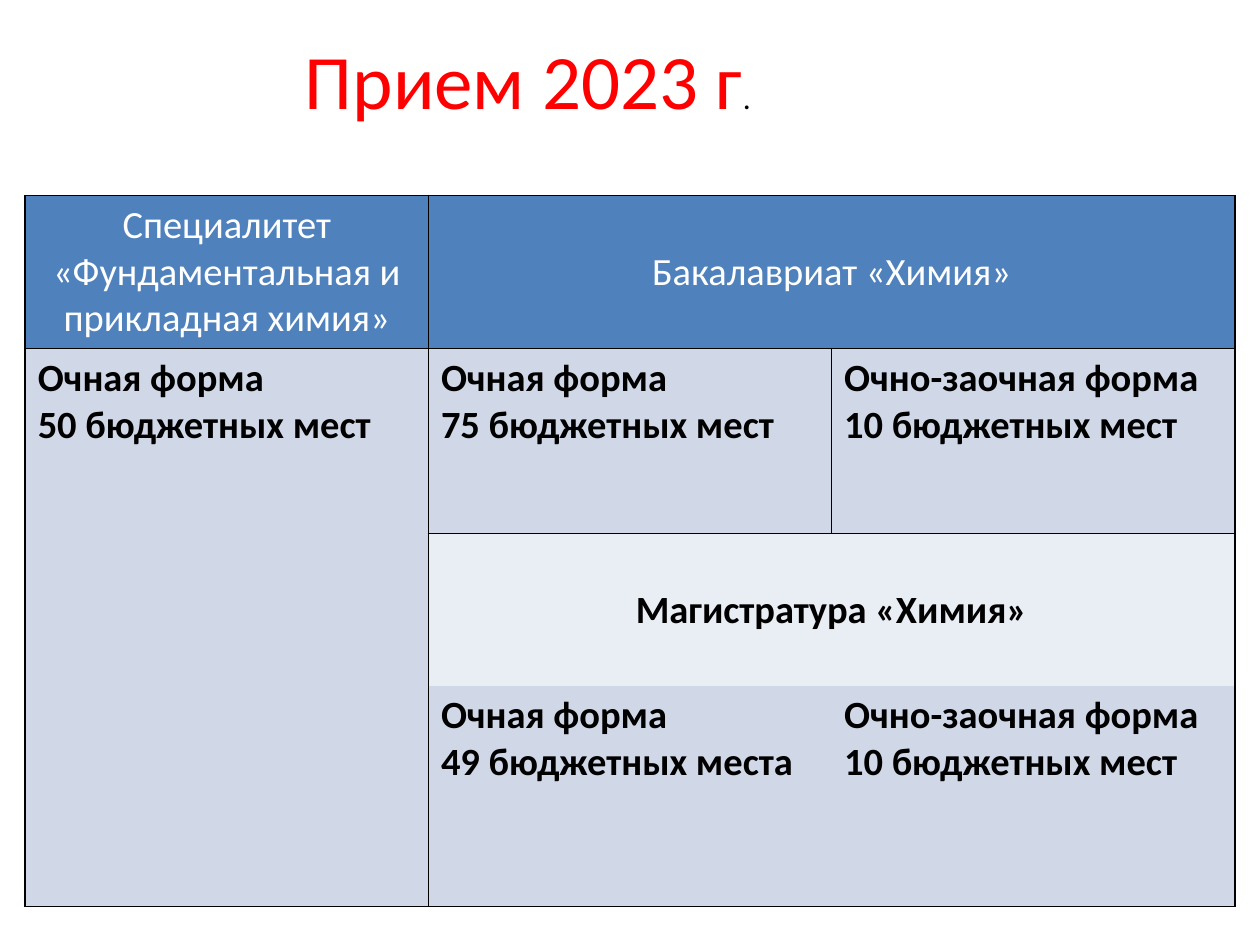
from dataclasses import dataclass

from lxml import etree
from pptx import Presentation
from pptx.dml.color import RGBColor
from pptx.enum.text import MSO_ANCHOR, MSO_AUTO_SIZE, PP_ALIGN
from pptx.oxml.ns import qn
from pptx.util import Inches, Pt

TOP, MIDDLE = MSO_ANCHOR.TOP, MSO_ANCHOR.MIDDLE
LEFT, CENTER = PP_ALIGN.LEFT, PP_ALIGN.CENTER
NO_FIT = MSO_AUTO_SIZE.NONE
FONT = "Calibri"
BLACK, WHITE, RED = "000000", "FFFFFF", "FF0000"
BLUE, BAND, PALE = "4F81BD", "D0D8E8", "E9EDF4"
WIDTHS = [3.2, 3.2, 3.2]
HEIGHTS = [1.21, 1.47, 1.21, 1.75]


@dataclass
class Entry:
    row: int
    col: int
    text: str
    fill: str = BAND
    rows: int = 1
    cols: int = 1
    head: bool = False   # centred heading
    color: str = BLACK
    sides: str = "LRTB"  # edges with a line


ENTRIES = [
    Entry(0, 0, "Специалитет «Фундаментальная и прикладная химия»",
          BLUE, head=True, color=WHITE),
    Entry(0, 1, "Бакалавриат «Химия»", BLUE, cols=2, head=True, color=WHITE),
    Entry(1, 0, "Очная форма\n50 бюджетных мест", rows=3),
    Entry(1, 1, "Очная форма\n75 бюджетных мест"),
    Entry(1, 2, "Очно-заочная форма\n10 бюджетных мест"),
    Entry(2, 1, "Магистратура «Химия»", PALE, cols=2, head=True, sides="LRT"),
    Entry(3, 1, "Очная форма\n49 бюджетных места", sides="LB"),
    Entry(3, 2, "Очно-заочная форма\n10 бюджетных мест", sides="RB"),
]


def rgb(code: str) -> RGBColor:
    return RGBColor.from_string(code)


def style(run, size: float, color: str, bold: bool = False) -> None:
    font = run.font
    font.name, font.size, font.bold = FONT, Pt(size), bold
    font.color.rgb = rgb(color)


def edge(cell, sides: str) -> None:
    """Line the named sides and clear the others."""
    props = cell._tc.get_or_add_tcPr()
    for side in "LRTB":
        line = etree.SubElement(props, qn(f"a:ln{side}"), w=str(Pt(1)))
        if side in sides:
            fill = etree.SubElement(line, qn("a:solidFill"))
            etree.SubElement(fill, qn("a:srgbClr"), val=BLACK)
        else:
            etree.SubElement(line, qn("a:noFill"))


def draw(table, item: Entry) -> None:
    # Every cell of a span carries the same lines and fill
    for row in range(item.row, item.row + item.rows):
        for col in range(item.col, item.col + item.cols):
            part = table.cell(row, col)
            edge(part, item.sides)
            part.fill.solid()
            part.fill.fore_color.rgb = rgb(item.fill)
    cell = table.cell(item.row, item.col)
    if item.rows * item.cols > 1:
        cell.merge(table.cell(row, col))
    cell.vertical_anchor = MIDDLE if item.head else TOP
    cell.text_frame.text = item.text
    for para in cell.text_frame.paragraphs:
        para.alignment = CENTER if item.head else LEFT
        for run in para.runs:
            style(run, 22, item.color, item.color == BLACK)


def main() -> None:
    deck = Presentation()
    deck.slide_width, deck.slide_height = Inches(10), Inches(7.5)
    slide = deck.slides.add_slide(deck.slide_layouts[5])

    # Title
    title = slide.shapes.title
    title.left, title.top = Inches(2.32), Inches(0.21)
    title.width, title.height = Inches(3.77), Inches(0.84)
    frame = title.text_frame
    frame.word_wrap, frame.auto_size = False, NO_FIT
    frame.vertical_anchor = TOP
    frame.text = "Прием 2023 г"
    para = frame.paragraphs[0]
    para.alignment = LEFT
    para.add_run().text = "."
    for run, size, color in zip(para.runs, (44, 18), (RED, BLACK)):
        style(run, size, color)

    # Admission table
    table = slide.shapes.add_table(
        len(HEIGHTS), len(WIDTHS), Inches(0.2), Inches(1.55),
        Inches(sum(WIDTHS)), Inches(sum(HEIGHTS))).table
    for col, width in zip(table.columns, WIDTHS):
        col.width = Inches(width)
    for row, height in zip(table.rows, HEIGHTS):
        row.height = Inches(height)
    for item in ENTRIES:
        draw(table, item)

    deck.save("out.pptx")


if __name__ == "__main__":
    main()
